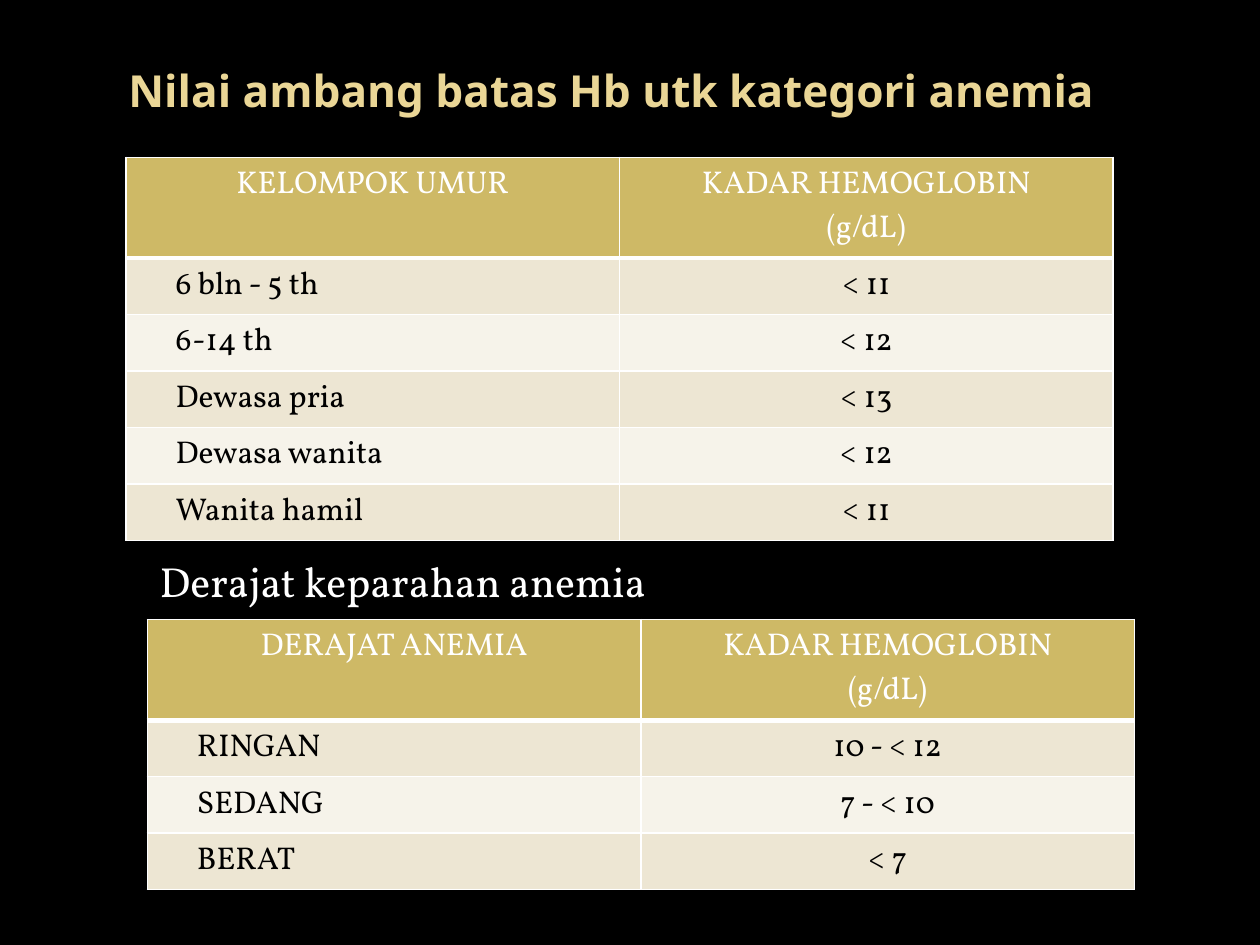
"""Build a slide of haemoglobin thresholds and severity grades for anaemia."""
from dataclasses import dataclass

import lxml.etree
import pptx
import pptx.dml.color
import pptx.enum.text
import pptx.oxml.ns
import pptx.slide
import pptx.table
import pptx.text.text
import pptx.util
from pptx.util import Cm, Pt

SERIF = "Vollkorn"
WHITE, BLACK = "FFFFFF", "000000"
GOLD, PALE_GOLD, SAND, IVORY = "CEB966", "EAD696", "EDE6D3", "F6F3EA"
COLUMN_WIDTH, HEADER_HEIGHT, ROW_HEIGHT = 9.95, 2.03, 1.14
HEMOGLOBIN = "KADAR HEMOGLOBIN\n(g/dL)"


@dataclass
class Heading:
    text: str
    left: float
    top: float
    width: float
    height: float
    font: str
    size: float
    color: str
    bold: bool = False
    wrap: bool = True


@dataclass
class Thresholds:
    left: float
    top: float
    rows: list[tuple[str, str]]


HEADINGS = [
    Heading("Nilai ambang batas Hb utk kategori anemia", 2.34, 0.64, 20.32, 2.34,
            "Noto Sans", 25.2, PALE_GOLD, bold=True),
    Heading("Derajat keparahan anemia", 2.97, 11.05, 10.59, 1.3,
            SERIF, 24, WHITE, wrap=False),
]
TABLES = [
    Thresholds(2.54, 3.17, [
        ("KELOMPOK UMUR", HEMOGLOBIN),
        ("6 bln - 5 th", "< 11"),
        ("6-14 th", "< 12"),
        ("Dewasa pria", "< 13"),
        ("Dewasa wanita", "< 12"),
        ("Wanita hamil", "< 11"),
    ]),
    Thresholds(2.97, 12.49, [
        ("DERAJAT ANEMIA", HEMOGLOBIN),
        ("RINGAN", "10 - < 12"),
        ("SEDANG", "7 - < 10"),
        ("BERAT", "< 7"),
    ]),
]


def rgb(color: str) -> pptx.dml.color.RGBColor:
    return pptx.dml.color.RGBColor.from_string(color)


def style_text(frame: pptx.text.text.TextFrame, font: str, size: float, color: str,
               bold: bool = False, centered: bool = False) -> None:
    align = pptx.enum.text.PP_ALIGN
    for paragraph in frame.paragraphs:
        paragraph.alignment = align.CENTER if centered else align.LEFT
        for run in paragraph.runs:
            run.font.name = font
            run.font.size = Pt(size)
            run.font.bold = bold
            run.font.color.rgb = rgb(color)


def draw_heading(slide: pptx.slide.Slide, heading: Heading) -> None:
    frame = slide.shapes.add_textbox(Cm(heading.left), Cm(heading.top),
                                     Cm(heading.width), Cm(heading.height)).text_frame
    frame.word_wrap = heading.wrap
    frame.vertical_anchor = pptx.enum.text.MSO_ANCHOR.MIDDLE
    frame.text = heading.text
    style_text(frame, heading.font, heading.size, heading.color, heading.bold)


def draw_borders(cell: pptx.table._Cell, bottom: float) -> None:
    qn = pptx.oxml.ns.qn
    properties = cell._tc.get_or_add_tcPr()
    for side, width in (("L", 1), ("R", 1), ("T", 1), ("B", bottom)):
        line = lxml.etree.SubElement(properties, qn(f"a:ln{side}"), w=str(Pt(width)))
        fill = lxml.etree.SubElement(line, qn("a:solidFill"))
        lxml.etree.SubElement(fill, qn("a:srgbClr"), val=WHITE)


def draw_table(slide: pptx.slide.Slide, thresholds: Thresholds) -> None:
    count = len(thresholds.rows)
    table = slide.shapes.add_table(
        count, 2, Cm(thresholds.left), Cm(thresholds.top), Cm(2 * COLUMN_WIDTH),
        Cm(HEADER_HEIGHT + (count - 1) * ROW_HEIGHT)).table
    for column in table.columns:
        column.width = Cm(COLUMN_WIDTH)
    for r, texts in enumerate(thresholds.rows):
        is_header = r == 0
        table.rows[r].height = Cm(HEADER_HEIGHT if is_header else ROW_HEIGHT)
        band = GOLD if is_header else SAND if r % 2 else IVORY
        for c, text in enumerate(texts):
            cell = table.cell(r, c)
            is_label = c == 0 and not is_header
            cell.text_frame.text = text
            style_text(cell.text_frame, SERIF, 18, WHITE if is_header else BLACK,
                       centered=not is_label)
            if is_label:
                cell.margin_left = Cm(1)
            draw_borders(cell, bottom=3 if is_header else 1)
            cell.fill.solid()
            cell.fill.fore_color.rgb = rgb(band)


def main() -> None:
    deck = pptx.Presentation()
    deck.slide_width, deck.slide_height = Cm(25.4), Cm(19.05)
    slide = deck.slides.add_slide(deck.slide_layouts[6])
    slide.background.fill.solid()
    slide.background.fill.fore_color.rgb = rgb(BLACK)
    for heading in HEADINGS:
        draw_heading(slide, heading)
    for thresholds in TABLES:
        draw_table(slide, thresholds)
    deck.save("out.pptx")


if __name__ == "__main__":
    main()
